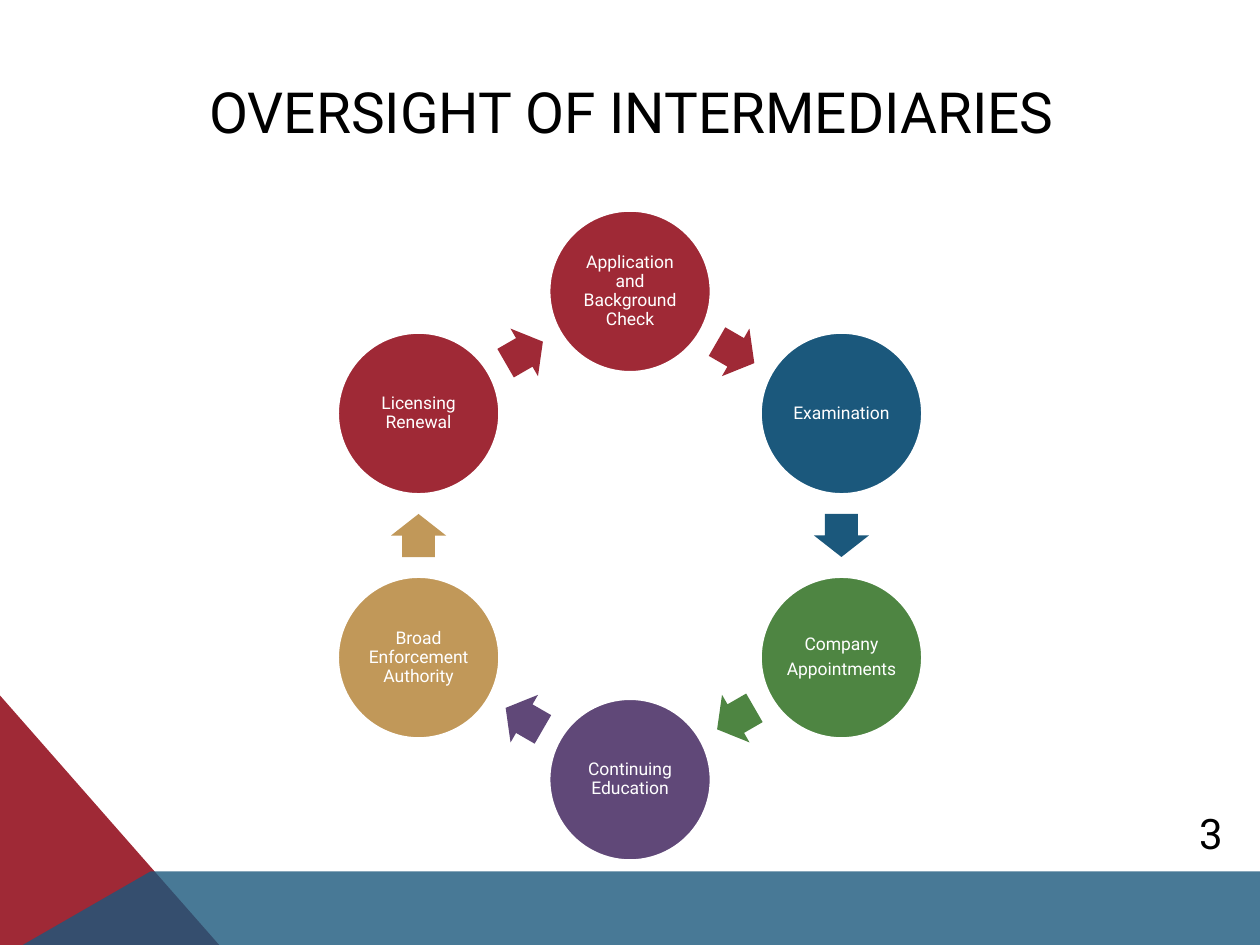
from math import cos, radians, sin

from lxml.etree import SubElement
from pptx import Presentation
from pptx.dml.color import RGBColor
from pptx.enum.shapes import MSO_SHAPE
from pptx.enum.text import MSO_ANCHOR, MSO_AUTO_SIZE, PP_ALIGN
from pptx.oxml.ns import qn
from pptx.util import Pt

FONT = "Roboto"
RED, BLUE, GREEN = "9F2936", "1B587C", "4E8542"
PURPLE, GOLD = "604878", "C19859"
WHITE, BLACK = "FFFFFF", "000000"
STEPS = [
    ("Application and Background Check", RED),
    ("Examination", BLUE),
    ("Company\nAppointments", GREEN),
    ("Continuing Education", PURPLE),
    ("Broad Enforcement Authority", GOLD),
    ("Licensing Renewal", RED),
]


def color(hex_code):
    """Turn a hex string into a colour."""
    return RGBColor.from_string(hex_code)


def paint(shape, fill=None, line=None):
    """Set the fill and outline of a shape and drop its shadow."""
    shape.shadow.inherit = False
    if fill:
        shape.fill.solid()
        shape.fill.fore_color.rgb = color(fill)
    else:
        shape.fill.background()
    if line:
        shape.line.color.rgb = color(line)
        shape.line.width = Pt(2)
    else:
        shape.line.fill.background()


def write(shape, text, size, text_color, inset=0.9):
    """Write centred text into a shape."""
    frame = shape.text_frame
    frame.text = text
    frame.word_wrap = True
    frame.auto_size = MSO_AUTO_SIZE.NONE
    frame.vertical_anchor = MSO_ANCHOR.MIDDLE
    frame.margin_left = frame.margin_right = Pt(inset)
    frame.margin_top = frame.margin_bottom = Pt(inset)
    for paragraph in frame.paragraphs:
        paragraph.alignment = PP_ALIGN.CENTER
        for run in paragraph.runs:
            run.font.name = FONT
            run.font.size = Pt(size)
            run.font.color.rgb = color(text_color)


def add_shape(slide, kind, center_x, center_y, width, height):
    """Add a preset shape around a centre point."""
    return slide.shapes.add_shape(
        kind, Pt(center_x - width / 2), Pt(center_y - height / 2), Pt(width), Pt(height)
    )


def add_polygon(slide, points, fill):
    """Add a closed filled outline through the given points."""
    corners = [(Pt(x), Pt(y)) for x, y in points]
    builder = slide.shapes.build_freeform(*corners[0], scale=1.0)
    builder.add_line_segments(corners[1:], close=True)
    shape = builder.convert_to_shape()
    paint(shape, fill)
    return shape


def add_footer(slide, left, top, width, height):
    """Draw the red corner and the translucent blue band over it."""
    right, bottom = left + width, top + height
    band_top = bottom - 42
    add_polygon(slide, [(left, top), (left + 125.3, bottom), (left, bottom)], RED)
    band = add_polygon(
        slide,
        [(left + 13, bottom), (left + 86, band_top), (right, band_top), (right, bottom)],
        BLUE,
    )
    fill_color = band.fill._xPr.find(qn("a:solidFill"))[0]
    SubElement(fill_color, qn("a:alpha")).set("val", "80000")


def add_title(slide, left, top, width, height):
    """Place and format the title placeholder."""
    title = slide.shapes.title
    title.left, title.top = Pt(left), Pt(top)
    title.width, title.height = Pt(width), Pt(height)
    write(title, "OVERSIGHT OF INTERMEDIARIES", 32.4, BLACK, inset=0)


def add_page_number(slide, left, top, width, height):
    """Place the page number in an unpainted ellipse."""
    badge = add_shape(
        slide, MSO_SHAPE.OVAL, left + width / 2, top + height / 2, width, height
    )
    paint(badge)
    write(badge, "3", 24, BLACK)


def add_cycle(slide, left, top, height, diameter=93):
    """Draw the steps clockwise on a ring, with an arrow after each one."""
    radius = (height - diameter) / 2
    center_x, center_y = left + height / 2, top + height / 2
    turn = 360 / len(STEPS)
    arrow_radius = radius * cos(radians(turn / 2))

    def on_ring(distance, angle):
        """Find the point at an angle clockwise from the top."""
        angle = radians(angle)
        return center_x + distance * sin(angle), center_y - distance * cos(angle)

    for index, (text, fill) in enumerate(STEPS):
        angle = index * turn
        circle = add_shape(
            slide, MSO_SHAPE.OVAL, *on_ring(radius, angle), diameter, diameter
        )
        paint(circle, fill, WHITE)
        write(circle, text, 10, WHITE)
        for paragraph in circle.text_frame.paragraphs:
            paragraph.line_spacing = 0.9
            paragraph.space_after = Pt(3.5)

        middle = angle + turn / 2
        arrow = add_shape(
            slide, MSO_SHAPE.RIGHT_ARROW, *on_ring(arrow_radius, middle), 24.6, 31.4
        )
        arrow.adjustments[0], arrow.adjustments[1] = 0.6, 0.5
        arrow.rotation = middle
        paint(arrow, fill)


def main():
    """Build and save the slide."""
    presentation = Presentation()
    presentation.slide_width, presentation.slide_height = Pt(720), Pt(540)
    slide = presentation.slides.add_slide(presentation.slide_layouts[5])
    add_footer(slide, 0, 397.4, 720, 142.6)
    add_title(slide, 65, 42, 592, 43)
    add_page_number(slide, 666, 456, 52, 40)
    add_cycle(slide, 174, 120, 372)
    presentation.save("out.pptx")


if __name__ == "__main__":
    main()
